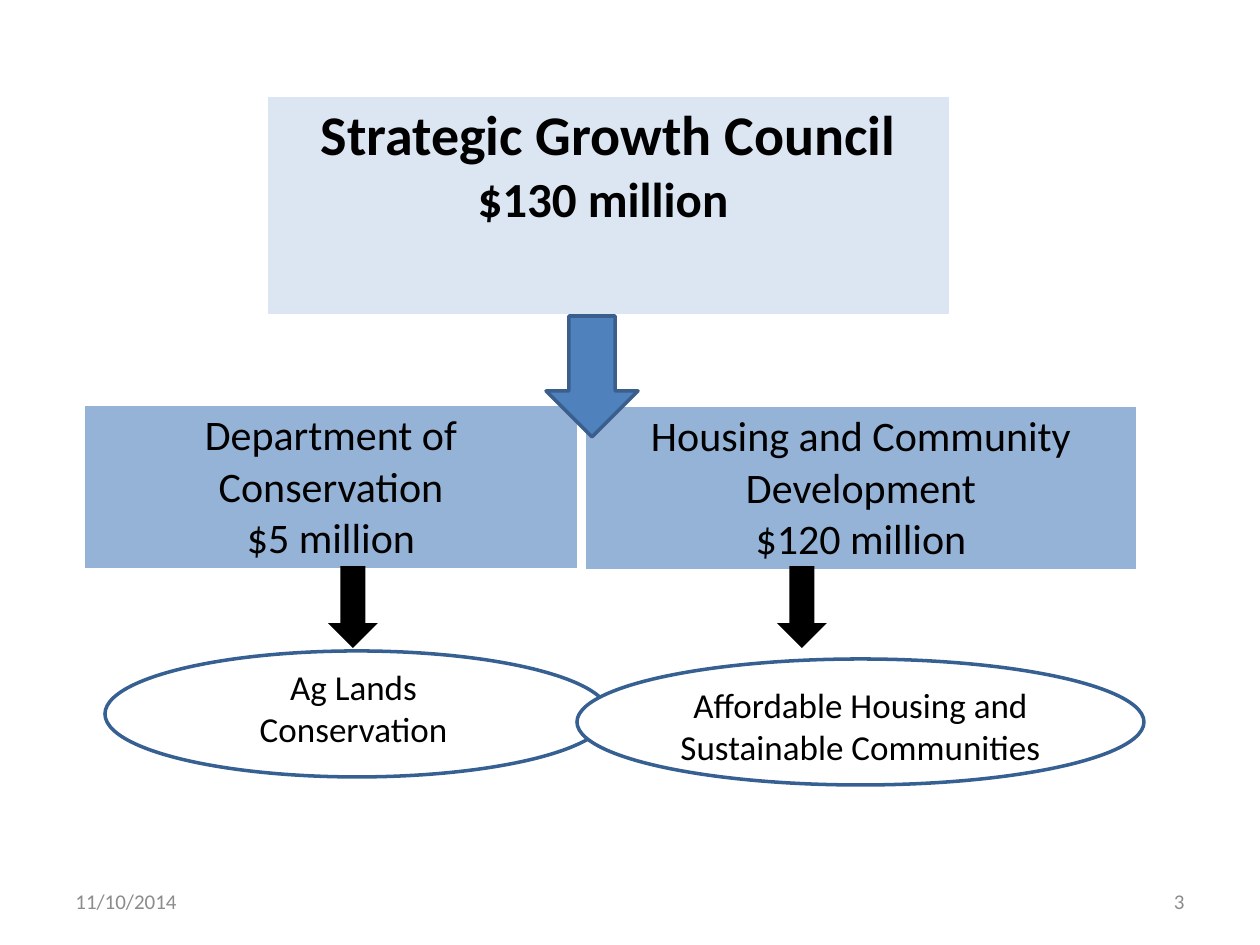
from lxml import etree
from pptx import Presentation
from pptx.dml.color import RGBColor
from pptx.enum.shapes import MSO_SHAPE
from pptx.enum.text import MSO_ANCHOR, PP_ALIGN
from pptx.oxml.ns import qn
from pptx.util import Emu, Pt

SCALE = 914400 / 126
OVAL, ARROW = MSO_SHAPE.OVAL, MSO_SHAPE.DOWN_ARROW
TOP, MIDDLE = MSO_ANCHOR.TOP, MSO_ANCHOR.MIDDLE
LEFT, CENTER, RIGHT = PP_ALIGN.LEFT, PP_ALIGN.CENTER, PP_ALIGN.RIGHT
COLORS = {
    "white": "FFFFFF", "black": "000000", "gray": "8C8C8C",
    "pale": "DCE6F2", "sky": "95B3D7", "blue": "4F81BD",
    "edge": "3A5F8C", "ring": "376092",
}
BORDERS = {"a:lnL": 1, "a:lnR": 1, "a:lnT": 1, "a:lnB": 3}


def px(n):
    return Emu(round(n * SCALE))


def box(*sides):
    return [px(n) for n in sides]


def color(name):
    return RGBColor.from_string(COLORS[name])


def write(frame, lines, align=CENTER, ink="black", bold=False):
    """Fill a text frame with (text, size) paragraphs."""
    for i, (text, size) in enumerate(lines):
        para = frame.add_paragraph() if i else frame.paragraphs[0]
        para.text = text
        para.alignment = align
        font = para.font
        font.name, font.size, font.bold = "Calibri", Pt(size), bold
        font.color.rgb = color(ink)


def edge(cell):
    """Draw white borders, heavier at the bottom."""
    props = cell._tc.get_or_add_tcPr()
    for tag, width in BORDERS.items():
        line = etree.SubElement(props, qn(tag), w=str(Pt(width)))
        fill = etree.SubElement(line, qn("a:solidFill"))
        etree.SubElement(fill, qn("a:srgbClr"), val=COLORS["white"])


def add_card(slide, sides, fill, lines, bold=False):
    """Add a one-cell table."""
    table = slide.shapes.add_table(1, 1, *box(*sides)).table
    table.first_row = table.horz_banding = False
    cell = table.cell(0, 0)
    cell.margin_left = cell.margin_right = px(9)
    cell.margin_top = cell.margin_bottom = px(6)
    edge(cell)
    cell.fill.solid()
    cell.fill.fore_color.rgb = color(fill)
    write(cell.text_frame, lines, bold=bold)


def add_form(slide, kind, sides, fill, line=None):
    form = slide.shapes.add_shape(kind, *box(*sides))
    form.shadow.inherit = False
    form.fill.solid()
    form.fill.fore_color.rgb = color(fill)
    if line:
        form.line.color.rgb = color(line)
        form.line.width = Pt(2)
    else:
        form.line.fill.background()
    return form


def add_text(slide, sides, text, size, align=CENTER, ink="black", anchor=TOP):
    frame = slide.shapes.add_textbox(*box(*sides)).text_frame
    frame.word_wrap = True
    frame.vertical_anchor = anchor
    write(frame, [(text, size)], align, ink)


def main():
    deck = Presentation()
    deck.slide_width, deck.slide_height = px(1260), px(945)
    slide = deck.slides.add_slide(deck.slide_layouts[6])

    add_card(slide, (267, 96, 683, 220), "pale",
             [("Strategic Growth Council", 32), ("$130 million ", 28)], True)
    add_card(slide, (84, 405, 494, 164), "sky",
             [("Department of Conservation", 24), ("$5 million", 24)])
    add_card(slide, (585, 406, 552, 164), "sky",
             [("Housing and Community Development\v$120 million", 24)])

    add_form(slide, OVAL, (105, 651, 504, 126), "white", "ring")
    add_text(slide, (188, 659, 331, 97), "Ag Lands Conservation", 20)
    oval = add_form(slide, OVAL, (577, 659, 567, 126), "white", "ring")
    frame = oval.text_frame
    frame.word_wrap = True
    frame.vertical_anchor = MIDDLE
    frame.margin_top, frame.margin_bottom = px(8), px(0)
    write(frame, [("Affordable Housing and Sustainable Communities", 20)])

    for left in (328, 777):
        add_form(slide, ARROW, (left, 566, 50, 82), "black")
    add_form(slide, ARROW, (546, 316, 92, 121), "blue", "edge")

    for left, text, align in ((903, "3", RIGHT), (63, "11/10/2014", LEFT)):
        add_text(slide, (left, 876, 294, 50), text, 12, align, "gray", MIDDLE)

    deck.save("out.pptx")


if __name__ == "__main__":
    main()
